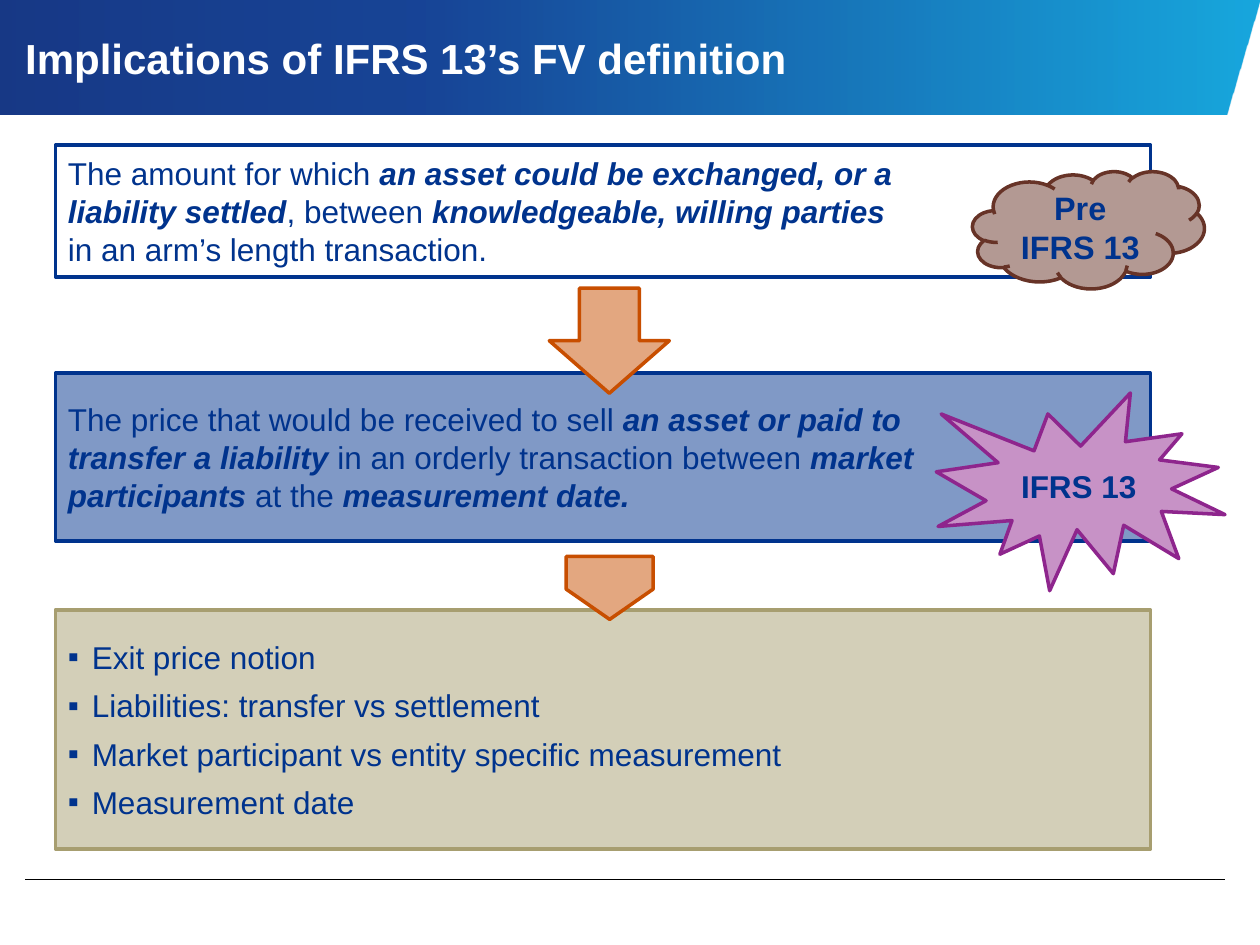
from lxml import etree
from pptx import Presentation
from pptx.dml.color import RGBColor
from pptx.enum.shapes import MSO_CONNECTOR, MSO_SHAPE as Shape
from pptx.enum.text import MSO_ANCHOR as Anchor, PP_ALIGN as Align
from pptx.oxml import parse_xml
from pptx.oxml.ns import nsdecls, qn
from pptx.util import Pt

COLORS = {
    "navy": "00257A", "blue": "00338D", "cyan": "009FDA", "white": "FFFFFF",
    "black": "000000", "periwinkle": "8099C6", "sand": "D3CFB8",
    "olive": "A79E70", "peach": "E3A780", "orange": "C84E00",
    "taupe": "B39993", "brown": "673327", "lilac": "C792C6", "purple": "8E258D",
}
FONT = "Arial"
BOX_LEFT, BOX_WIDTH = 31.7, 625.7
OLD_DEFINITION = [
    [("The amount for which ", False), ("an asset could be exchanged, or a", True)],
    [("liability settled", True), (", between ", False),
     ("knowledgeable, willing parties", True)],
    [("in an arm’s length transaction.", False)],
]
NEW_DEFINITION = [
    [("The price that would be received to sell ", False),
     ("an asset or paid to", True)],
    [("transfer a liability", True), (" in an orderly transaction between ", False),
     ("market", True)],
    [("participants", True), (" at the ", False), ("measurement date.", True)],
]
IMPLICATIONS = [
    "Exit price notion",
    "Liabilities: transfer vs settlement",
    "Market participant vs entity specific measurement",
    "Measurement date",
]


def rgb(name):
    """Return the named palette colour."""
    return RGBColor.from_string(COLORS[name])


def style_font(font, size, color="blue", bold=False, italic=False):
    """Apply typeface, size, colour and emphasis to a font."""
    font.name, font.size = FONT, Pt(size)
    font.bold, font.italic = bold, italic
    font.color.rgb = rgb(color)


def add_panel(slide, kind, box, fill, outline):
    """Add an outlined preset shape, hollow when fill is None."""
    panel = slide.shapes.add_shape(kind, *map(Pt, box))
    panel.shadow.inherit = False
    if fill:
        panel.fill.solid()
        panel.fill.fore_color.rgb = rgb(fill)
    else:
        panel.fill.background()
    panel.line.color.rgb = rgb(outline)
    panel.line.width = Pt(2)
    panel.text_frame.word_wrap = True
    panel.text_frame.vertical_anchor = Anchor.MIDDLE
    return panel


def add_header(slide, box, title):
    """Draw the slanted gradient band and the title on it."""
    left, top, width, height = box
    outline = slide.shapes.build_freeform(Pt(left), Pt(top))
    outline.add_line_segments([
        (Pt(left), Pt(top + height)),
        (Pt(left + width - 19.4), Pt(top + height)),
        (Pt(left + width), Pt(top)),
    ])
    band = outline.convert_to_shape()
    band.shadow.inherit = False
    band.line.fill.background()
    band.fill.gradient()
    band.fill.gradient_angle = 0
    stops = band.fill.gradient_stops
    stop_list = band.element.spPr.find(qn("a:gradFill")).find(qn("a:gsLst"))
    for stop in list(stop_list):
        stop_list.remove(stop)
    for position, color in ((0, "navy"), (35, "blue"), (100, "cyan")):
        stop_list.append(parse_xml(
            f'<a:gs {nsdecls("a")} pos="{position * 1000}">'
            f'<a:srgbClr val="{COLORS[color]}"><a:alpha val="90000"/></a:srgbClr></a:gs>'))

    heading = slide.shapes.add_textbox(
        Pt(left + 14.4), Pt(top), Pt(543.6), Pt(height + 0.7)).text_frame
    heading.word_wrap = True
    heading.vertical_anchor = Anchor.MIDDLE
    heading.margin_left = heading.margin_right = 0
    heading.margin_top = heading.margin_bottom = 0
    heading.text = title
    style_font(heading.paragraphs[0].runs[0].font, 24, "white", bold=True)


def add_footer_rule(slide, left, top, width):
    """Draw the hairline above the footer."""
    rule = slide.shapes.add_connector(
        MSO_CONNECTOR.STRAIGHT, Pt(left), Pt(top), Pt(left + width), Pt(top))
    rule.line.color.rgb = rgb("black")
    rule.line.width = Pt(0.25)
    etree.SubElement(rule.element.spPr, qn("a:effectLst"))


def add_definition(slide, box, lines, fill=None):
    """Add a definition box with its key phrases emphasised."""
    frame = add_panel(slide, Shape.RECTANGLE, box, fill, "blue").text_frame
    for index, phrases in enumerate(lines):
        line = frame.add_paragraph() if index else frame.paragraphs[0]
        line.alignment = Align.LEFT
        for phrase, key in phrases:
            run = line.add_run()
            run.text = phrase
            style_font(run.font, 18, bold=key, italic=key)


def add_implications(slide, box, items):
    """Add the bulleted box of implications with its pointer on top."""
    left, top, width, height = box
    frame = add_panel(slide, Shape.RECTANGLE, box, "sand", "olive").text_frame
    frame.text = "\n".join(items)
    for item in frame.paragraphs:
        item.alignment = Align.LEFT
        item.space_after = Pt(6)
        properties = item._p.get_or_add_pPr()
        properties.set("marL", str(Pt(13.7)))
        properties.set("indent", str(-Pt(13.7)))
        bullet_color = etree.SubElement(properties, qn("a:buClr"))
        etree.SubElement(bullet_color, qn("a:srgbClr"), val=COLORS["blue"])
        etree.SubElement(properties, qn("a:buFont"), typeface=FONT)
        etree.SubElement(properties, qn("a:buChar"), char="▪")
        style_font(item.runs[0].font, 18)
    pointer = add_panel(slide, Shape.PENTAGON,
                        (left + width / 2 - 14.2, top - 37.4, 36, 49.7),
                        "peach", "orange")
    pointer.rotation = 90
    pointer.adjustments[0] = 0.48


def add_badge(slide, kind, box, label, size, fill, outline):
    """Add a labelled badge over the right end of a definition."""
    frame = add_panel(slide, kind, box, fill, outline).text_frame
    frame.text = label
    caption = frame.paragraphs[0]
    caption.alignment = Align.CENTER
    caption.space_after = Pt(6)
    style_font(caption.runs[0].font, size, bold=True)


def build_slide(slide):
    """Place every region of the slide from back to front."""
    add_header(slide, (0, 0, 720, 65.5), "Implications of IFRS 13’s FV definition")
    add_footer_rule(slide, 14.4, 502.6, 685.4)
    add_definition(slide, (BOX_LEFT, 82.8, BOX_WIDTH, 75.6), OLD_DEFINITION)
    add_badge(slide, Shape.CLOUD, (555.8, 97.9, 132.5, 67), "Pre IFRS 13", 18.5,
              "taupe", "brown")
    add_implications(slide, (BOX_LEFT, 348.5, BOX_WIDTH, 136.8), IMPLICATIONS)
    add_definition(slide, (BOX_LEFT, 213.3, BOX_WIDTH, 95.8), NEW_DEFINITION,
                   "periwinkle")
    add_panel(slide, Shape.DOWN_ARROW, (313.9, 164.7, 68.6, 60), "peach", "orange")
    add_badge(slide, Shape.EXPLOSION1, (535, 224.6, 165, 113), "IFRS 13", 18,
              "lilac", "purple")


def main():
    """Build and save the presentation."""
    deck = Presentation()
    deck.slide_width, deck.slide_height = Pt(720), Pt(540)
    build_slide(deck.slides.add_slide(deck.slide_layouts[6]))
    deck.save("out.pptx")


if __name__ == "__main__":
    main()
